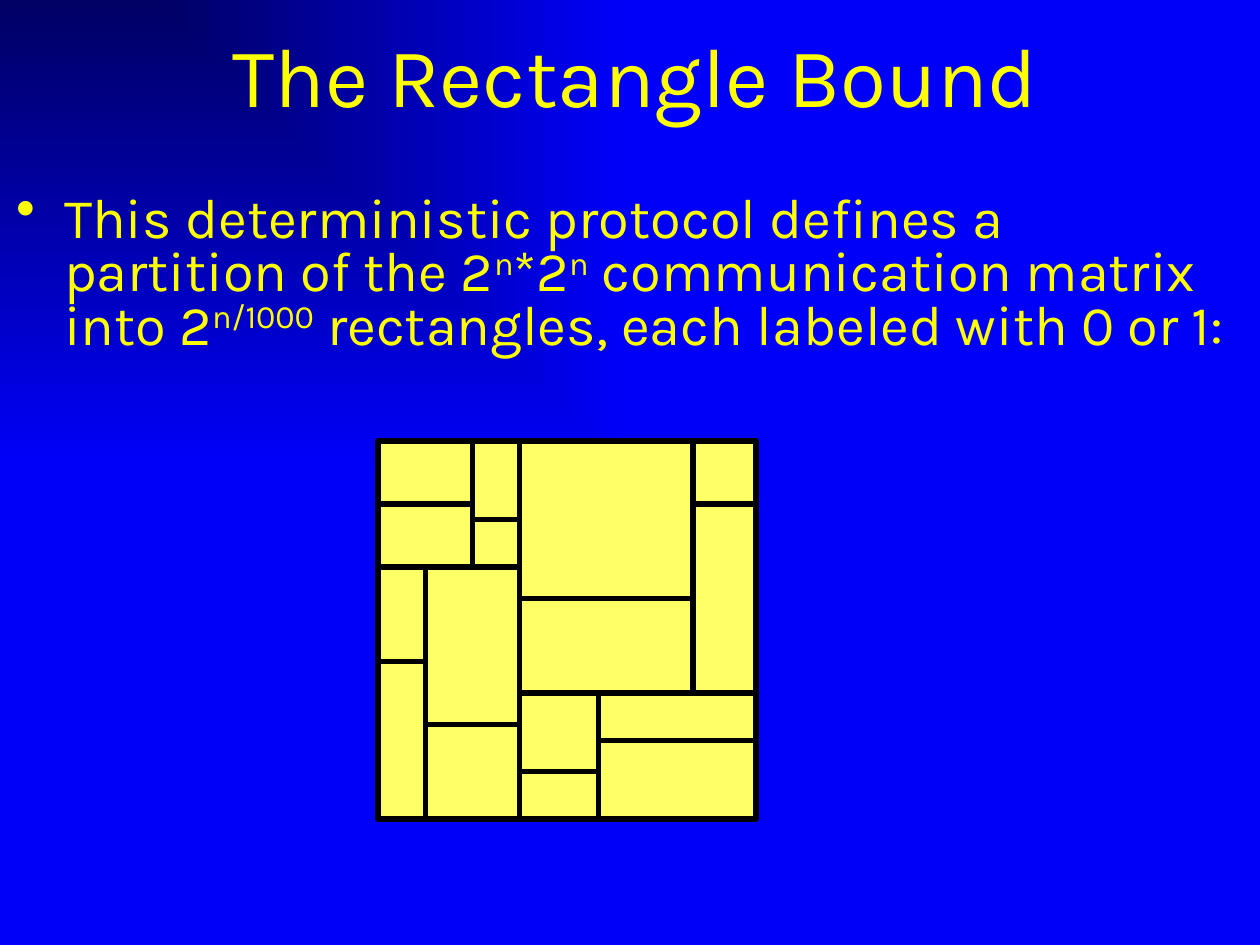
import dataclasses

import pptx
import pptx.dml.color
import pptx.enum.shapes
import pptx.enum.text
import pptx.oxml
import pptx.oxml.ns
import pptx.util

Inches = pptx.util.Inches
Pt = pptx.util.Pt
qn = pptx.oxml.ns.qn
Color = pptx.dml.color.RGBColor.from_string


@dataclasses.dataclass(frozen=True)
class Theme:
    """Colours, font and sizes of the deck."""
    dark: str = "000064"
    bright: str = "0000FA"
    text: str = "FFFF00"
    matrix: str = "FFFF66"
    line: str = "000000"
    font: str = "Karla"
    title_size: int = 48
    body_size: int = 32
    line_width: int = 3


THEME = Theme()
TITLE = "The Rectangle Bound"
STATEMENT = [
    ("This deterministic protocol defines a partition of the 2", False),
    ("n", True),
    ("*2", False),
    ("n", True),
    (" communication matrix into 2", False),
    ("n/1000", True),
    (" rectangles, each labeled with 0 or 1:", False),
]
MATRIX_CELLS = 24
VERTICAL_CUTS = [(9, 0, 24), (6, 0, 8), (20, 0, 16), (3, 8, 24), (14, 16, 24)]
HORIZONTAL_CUTS = [
    (8, 0, 9), (16, 9, 24), (14, 0, 3), (4, 0, 6), (5, 6, 9), (10, 9, 20),
    (4, 20, 24), (21, 9, 14), (19, 14, 24), (18, 3, 9),
]


def add_child(parent, tag, **attributes):
    """Append a DrawingML element with the given attributes."""
    child = pptx.oxml.parse_xml(f"<{tag} {pptx.oxml.ns.nsdecls('a')}/>")
    for name, value in attributes.items():
        child.set(name, value)
    parent.append(child)
    return child


def paint_background(page):
    """Fill the page with a gradient that spreads from its top left corner."""
    fill = page.background.fill
    fill.gradient()
    for stop, color in zip(fill.gradient_stops, (THEME.dark, THEME.bright)):
        stop.color.rgb = Color(color)
    gradient = page.element.find(".//" + qn("a:gradFill"))
    gradient.remove(gradient.find(qn("a:lin")))
    spread = add_child(gradient, "a:path", path="rect")
    add_child(spread, "a:fillToRect", r="100000", b="100000")


def set_font(para, size):
    """Give a paragraph the deck's font and text colour."""
    para.font.name = THEME.font
    para.font.size = Pt(size)
    para.font.color.rgb = Color(THEME.text)


def place_title(page, left, top, width, height):
    """Move the title placeholder to the box and format it."""
    title = page.shapes.title
    title.left, title.top, title.width, title.height = left, top, width, height
    frame = title.text_frame
    frame.text = TITLE
    frame.auto_size = pptx.enum.text.MSO_AUTO_SIZE.NONE
    frame.vertical_anchor = pptx.enum.text.MSO_ANCHOR.MIDDLE
    para = frame.paragraphs[0]
    para.alignment = pptx.enum.text.PP_ALIGN.CENTER
    set_font(para, THEME.title_size)


def place_statement(page, left, top, width, height):
    """Write the bulleted statement with its raised exponents."""
    frame = page.shapes.add_textbox(left, top, width, height).text_frame
    frame.word_wrap = True
    para = frame.paragraphs[0]
    para.line_spacing = 0.8
    para.space_before = Pt(0.2 * THEME.body_size)
    set_font(para, THEME.body_size)
    properties = para._p.get_or_add_pPr()
    indent = Inches(0.38)
    properties.set("marL", str(indent))
    properties.set("indent", str(-indent))
    bullet = add_child(properties, "a:buChar", char="•")
    properties.find(qn("a:defRPr")).addprevious(bullet)
    for text, raised in STATEMENT:
        span = para.add_run()
        span.text = text
        if raised:
            span._r.get_or_add_rPr().set("baseline", "30000")


def style_line(line):
    """Apply the matrix line colour and width."""
    line.color.rgb = Color(THEME.line)
    line.width = Pt(THEME.line_width)


def place_matrix(page, left, top, side):
    """Draw the square matrix and the cuts that partition it."""
    square = page.shapes.add_shape(
        pptx.enum.shapes.MSO_SHAPE.RECTANGLE, left, top, side, side)
    square.shadow.inherit = False
    square.fill.solid()
    square.fill.fore_color.rgb = Color(THEME.matrix)
    style_line(square.line)
    cell = side // MATRIX_CELLS
    cuts = [(x, start, x, end) for x, start, end in VERTICAL_CUTS]
    cuts += [(start, y, end, y) for y, start, end in HORIZONTAL_CUTS]
    for x1, y1, x2, y2 in cuts:
        cut = page.shapes.add_connector(
            pptx.enum.shapes.MSO_CONNECTOR.STRAIGHT,
            left + x1 * cell, top + y1 * cell,
            left + x2 * cell, top + y2 * cell)
        style_line(cut.line)
        add_child(cut.element.spPr, "a:effectLst")


def main():
    """Build and save the deck."""
    deck = pptx.Presentation()
    deck.slide_width, deck.slide_height = Inches(10), Inches(7.5)
    page = deck.slides.add_slide(deck.slide_layouts.get_by_name("Title Only"))
    paint_background(page)
    place_title(page, Inches(0.34), Inches(-0.04), Inches(9.41), Inches(1.25))
    place_statement(page, Inches(0.03), Inches(1.5), Inches(9.92), Inches(5.41))
    place_matrix(page, Inches(3), Inches(3.5), Inches(3))
    deck.save("out.pptx")


if __name__ == "__main__":
    main()
